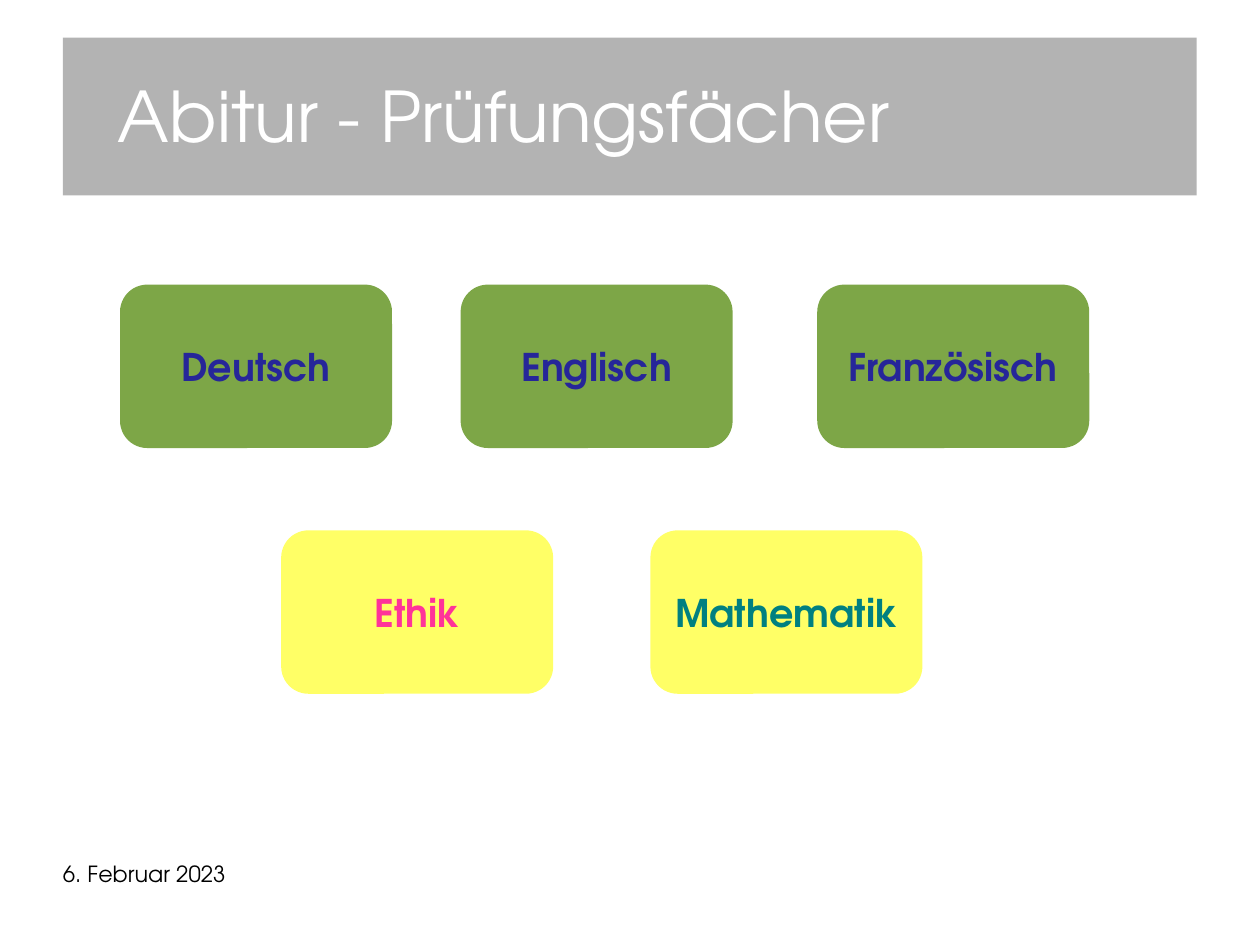
from pptx import Presentation
from pptx.dml.color import RGBColor
from pptx.enum.shapes import MSO_SHAPE
from pptx.enum.text import MSO_ANCHOR, MSO_AUTO_SIZE, PP_ALIGN
from pptx.util import Inches, Pt

ROUND = MSO_SHAPE.ROUNDED_RECTANGLE
MIDDLE = MSO_ANCHOR.MIDDLE
FIXED = MSO_AUTO_SIZE.NONE
LEFT, CENTER = PP_ALIGN.LEFT, PP_ALIGN.CENTER
FACE = "TeX Gyre Adventor"
GREEN, YELLOW, BLUE = "7DA647", "FFFF66", "262699"


def paint(item, color):
    item.solid()
    item.fore_color.rgb = RGBColor.from_string(color)


def write(frame, text, size, color, align, insets=(0, 0, 0, 0), bold=False):
    frame.auto_size = FIXED
    left, top, right, bottom = [Inches(inset) for inset in insets]
    frame.margin_left, frame.margin_top = left, top
    frame.margin_right, frame.margin_bottom = right, bottom
    frame.text = text
    line = frame.paragraphs[0]
    line.alignment = align
    font = line.runs[0].font
    font.name, font.size, font.bold = FACE, Pt(size), bold
    paint(font.fill, color)
    return line


deck = Presentation()
deck.slide_width, deck.slide_height = Inches(28 / 2.54), Inches(21 / 2.54)
slide = deck.slides.add_slide(deck.slide_layouts[5])
shapes = slide.shapes

title = shapes.title
title.left, title.top = Inches(0.55), Inches(0.33)
title.width, title.height = Inches(9.92), Inches(1.38)
paint(title.fill, "B3B3B3")
title.text_frame.vertical_anchor = MIDDLE
line = write(title.text_frame, "Abitur - Prüfungsfächer", 44, "FFFFFF", LEFT,
             (0.2, 0.04, 0.2, 0))
line.line_spacing = 0.93
line._p.get_or_add_pPr().set("marL", str(Inches(0.28)))

cards = [
    ("Deutsch", 1.05, 2.49, GREEN, BLUE),
    ("Englisch", 4.03, 2.49, GREEN, BLUE),
    ("Französisch", 7.15, 2.49, GREEN, BLUE),
    ("Ethik", 2.46, 4.64, YELLOW, "FF3399"),
    ("Mathematik", 5.69, 4.64, YELLOW, "008080"),
]
for name, left, top, fill, color in cards:
    card = shapes.add_shape(ROUND, Inches(left), Inches(top), Inches(2.38), Inches(1.43))
    card.shadow.inherit = False
    card.line.fill.background()
    paint(card.fill, fill)
    card.text_frame.word_wrap = False
    card.text_frame.vertical_anchor = MIDDLE
    write(card.text_frame, name, 24, color, CENTER, bold=True)

date = shapes.add_textbox(Inches(0.55), Inches(7.55), Inches(2.57), Inches(0.57))
date.text_frame.word_wrap = True
line = write(date.text_frame, "6. Februar 2023", 14, "000000", LEFT)
line.line_spacing = 0.93

deck.save("out.pptx")
